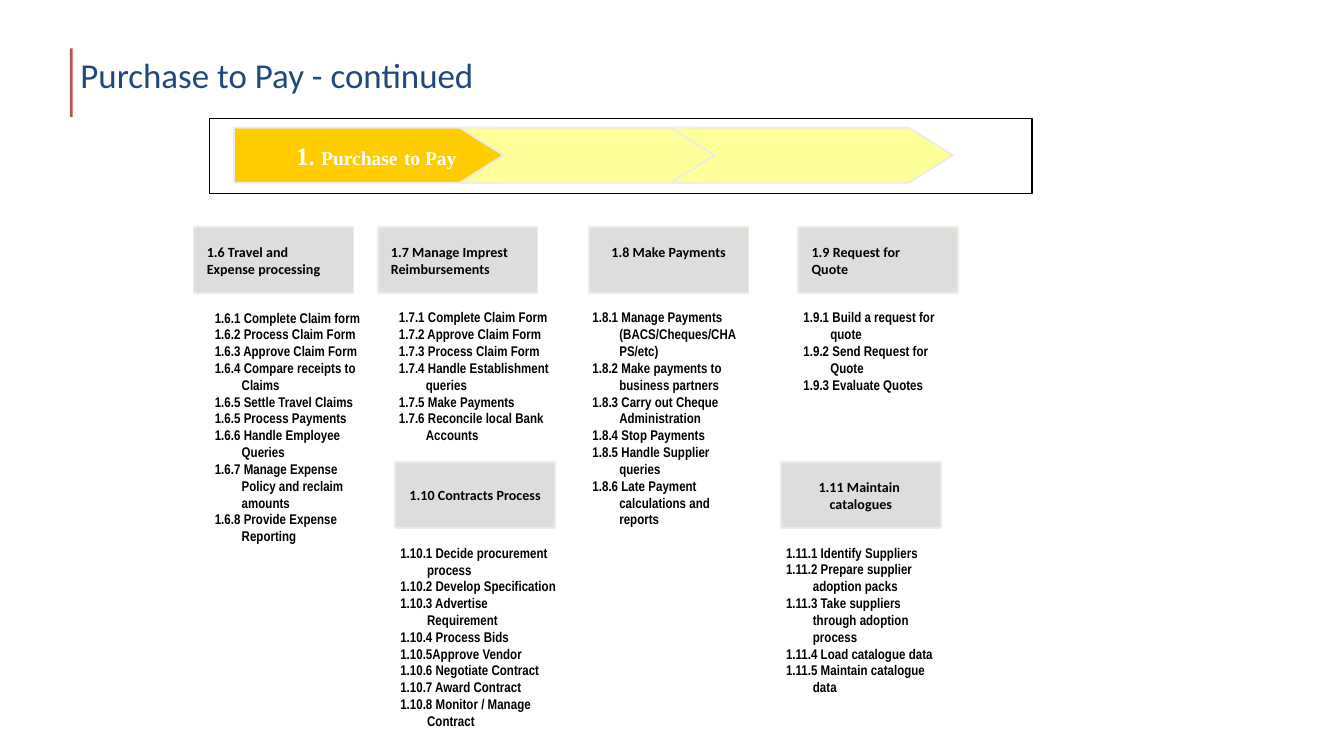
from pptx import Presentation
from pptx.dml.color import RGBColor
from pptx.enum.shapes import MSO_SHAPE
from pptx.enum.text import MSO_ANCHOR, MSO_AUTO_SIZE, PP_ALIGN
from pptx.util import Inches, Pt

COLOURS = {
    "title": "1F497D", "accent": "C0504D", "black": "000000", "white": "FFFFFF",
    "edge": "EEECE1", "gold": "FFCC00", "yellow": "FFFF99", "grey": "DDDDDD",
}

PROCESSES = [
    (1.44, 1.69, 1.5, 1.32, PP_ALIGN.LEFT, ["1.6 Travel and", "Expense processing"], [
        "1.6.1 Complete Claim form", "1.6.2 Process Claim Form",
        "1.6.3 Approve Claim Form", "1.6.4 Compare receipts to Claims",
        "1.6.5 Settle Travel Claims", "1.6.5 Process Payments",
        "1.6.6 Handle Employee Queries",
        "1.6.7 Manage Expense Policy and reclaim amounts",
        "1.6.8 Provide Expense Reporting"]),
    (2.81, 1.69, 2.87, 1.32, PP_ALIGN.LEFT, ["1.7 Manage Imprest", "Reimbursements"], [
        "1.7.1 Complete Claim Form", "1.7.2 Approve Claim Form",
        "1.7.3 Process Claim Form", "1.7.4 Handle Establishment queries",
        "1.7.5 Make Payments", "1.7.6 Reconcile local Bank Accounts"]),
    (4.38, 1.69, 4.31, 1.32, PP_ALIGN.CENTER, ["1.8 Make Payments"], [
        "1.8.1 Manage Payments (BACS/Cheques/CHAPS/etc)",
        "1.8.2 Make payments to business partners",
        "1.8.3 Carry out Cheque Administration", "1.8.4 Stop Payments",
        "1.8.5 Handle Supplier queries",
        "1.8.6 Late Payment calculations and reports"]),
    (5.94, 1.69, 5.88, 1.32, PP_ALIGN.LEFT, ["1.9 Request for", "Quote"], [
        "1.9.1 Build a request for quote", "1.9.2 Send Request for Quote",
        "1.9.3 Evaluate Quotes"]),
    (2.94, 3.44, 2.88, 1.38, PP_ALIGN.CENTER, ["1.10 Contracts Process"], [
        "1.10.1 Decide procurement process", "1.10.2 Develop Specification",
        "1.10.3 Advertise Requirement", "1.10.4 Process Bids",
        "1.10.5Approve Vendor", "1.10.6 Negotiate Contract",
        "1.10.7 Award Contract", "1.10.8 Monitor / Manage Contract"]),
    (5.81, 3.44, 5.75, 1.38, PP_ALIGN.CENTER, ["1.11 Maintain ", "catalogues"], [
        "1.11.1 Identify Suppliers", "1.11.2 Prepare supplier adoption packs",
        "1.11.3 Take suppliers through adoption process",
        "1.11.4 Load catalogue data", "1.11.5 Maintain catalogue data"]),
]
LINE_HEIGHT = 0.12
LIST_HEIGHTS = [2.12, 1.24, 1.74, 0.73, 1.62, 1.24]


def add_span(para, text, *, size, font, colour, bold=False):
    span = para.add_run()
    span.text = text
    span.font.size = Pt(size)
    span.font.name = font
    span.font.bold = bold
    span.font.color.rgb = RGBColor.from_string(COLOURS[colour])


class SlideBuilder:
    heading_style = dict(size=7.5, font="Calibri", colour="black", bold=True)
    list_style = dict(heading_style, font="Arial Narrow")

    def __init__(self, page):
        self.page = page

    def shape(self, kind, left, top, width, height, fill=None, line=None,
              weight=1, point=None, parent=None):
        owner = parent or self.page
        box = owner.shapes.add_shape(
            kind, Inches(left), Inches(top), Inches(width), Inches(height))
        box.shadow.inherit = False
        if point is not None:
            box.adjustments[0] = point
        if fill:
            box.fill.solid()
            box.fill.fore_color.rgb = RGBColor.from_string(COLOURS[fill])
        else:
            box.fill.background()
        if line:
            box.line.color.rgb = RGBColor.from_string(COLOURS[line])
            box.line.width = Pt(weight)
        else:
            box.line.fill.background()
        return box

    def text(self, left, top, width, height, lines, style, hanging=0):
        box = self.page.shapes.add_textbox(
            Inches(left), Inches(top), Inches(width), Inches(height))
        frame = box.text_frame
        frame.word_wrap = True
        if hanging:
            frame.auto_size = MSO_AUTO_SIZE.SHAPE_TO_FIT_TEXT
        self.fill_lines(frame, lines, style, PP_ALIGN.LEFT, hanging)

    def fill_lines(self, frame, lines, style, align, hanging=0):
        for index, line in enumerate(lines):
            para = frame.add_paragraph() if index else frame.paragraphs[0]
            para.alignment = align
            if hanging:
                properties = para._p.get_or_add_pPr()
                properties.set("marL", str(Inches(hanging)))
                properties.set("indent", str(-Inches(hanging)))
            add_span(para, line, **style)

    def heading(self, left, top, lines, align):
        box = self.shape(MSO_SHAPE.RECTANGLE, left, top, 1.19, 0.49, "grey", "edge")
        frame = box.text_frame
        frame.word_wrap = True
        frame.vertical_anchor = MSO_ANCHOR.MIDDLE
        if lines == ["1.8 Make Payments"]:
            frame.margin_bottom = Inches(0.05 + LINE_HEIGHT)
        self.fill_lines(frame, lines, self.heading_style, align)

    def banner(self):
        group = self.page.shapes.add_group_shape()
        self.shape(MSO_SHAPE.RECTANGLE, 1.56, 0.88, 6.12, 0.56,
                   line="black", weight=0.75, parent=group)
        arrow = self.shape(MSO_SHAPE.PENTAGON, 1.74, 0.95, 2.33, 0.41,
                           "gold", "edge", point=0.88, parent=group)
        frame = arrow.text_frame
        frame.word_wrap = False
        frame.vertical_anchor = MSO_ANCHOR.MIDDLE
        frame.margin_left = Inches(0.07)
        para = frame.paragraphs[0]
        para.alignment = PP_ALIGN.CENTER
        for text, size in (("1. ", 13.5), ("Purchase", 10.5), (" ", 13.5), ("to Pay", 10.5)):
            add_span(para, text, size=size, font="Times New Roman",
                     colour="white", bold=True)
        for left in (3.42, 4.99):
            self.shape(MSO_SHAPE.CHEVRON, left, 0.95, 2.1, 0.41,
                       "yellow", "edge", point=0.8, parent=group)


def main():
    deck = Presentation()
    deck.slide_width = Inches(10)
    deck.slide_height = deck.slide_width * 9 // 16
    builder = SlideBuilder(deck.slides.add_slide(deck.slide_layouts[6]))
    builder.shape(MSO_SHAPE.RECTANGLE, 0.52, 0.36, 0.02, 0.51, "accent")
    builder.text(0.5, 0.35, 8.69, 0.68, ["Purchase to Pay - continued"],
                 dict(size=18.75, font="Calibri", colour="title"))
    builder.banner()
    for process, list_height in zip(PROCESSES, LIST_HEIGHTS):
        left, top, list_left, list_width, align, heading, steps = process
        builder.heading(left, top, heading, align)
        builder.text(list_left, top + 0.56, list_width, list_height,
                     steps, builder.list_style, hanging=0.2)
    deck.save("out.pptx")


if __name__ == "__main__":
    main()
